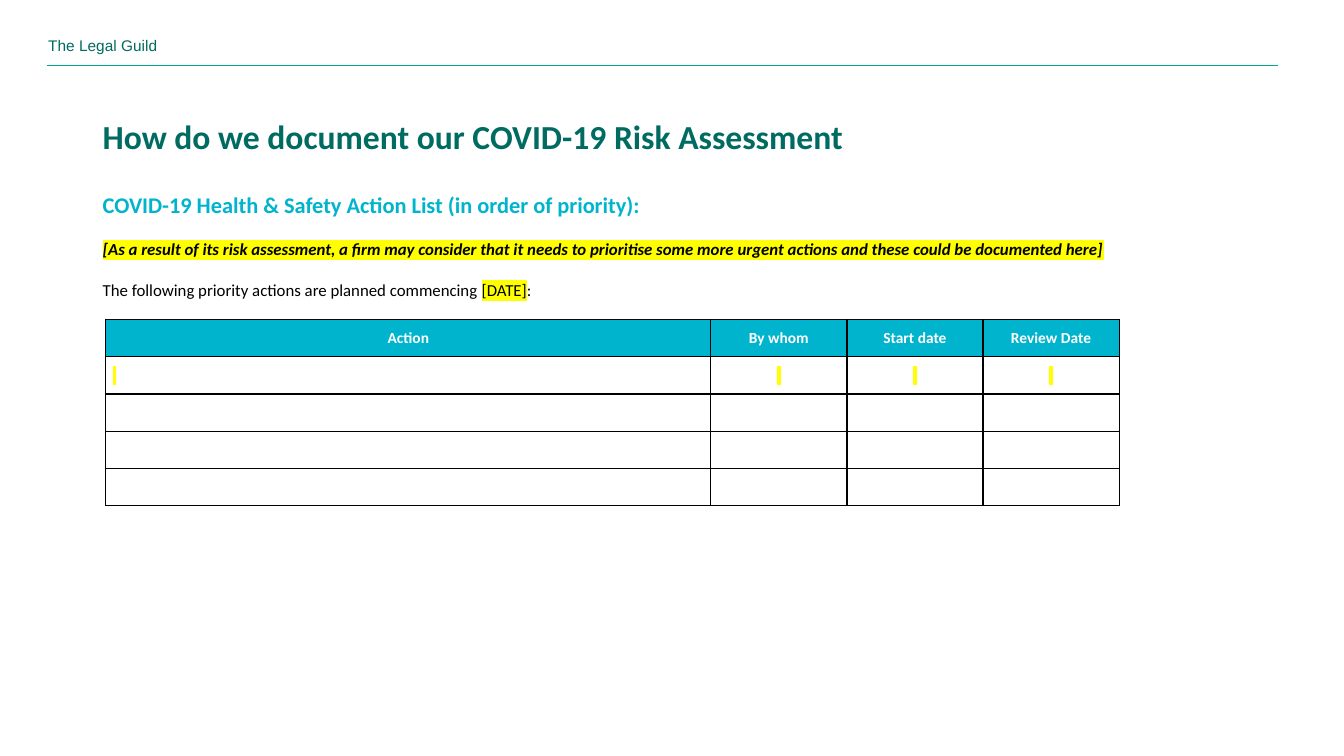
from lxml import etree
from pptx import Presentation
from pptx.dml.color import RGBColor
from pptx.enum.shapes import MSO_CONNECTOR
from pptx.enum.text import MSO_ANCHOR, PP_ALIGN
from pptx.oxml.ns import qn
from pptx.util import Inches, Pt

LEFT, CENTER, JUSTIFY = PP_ALIGN.LEFT, PP_ALIGN.CENTER, PP_ALIGN.JUSTIFY
TOP, MIDDLE = MSO_ANCHOR.TOP, MSO_ANCHOR.MIDDLE
STRAIGHT = MSO_CONNECTOR.STRAIGHT

GREEN, RULE_GREEN, TEAL = "006C61", "00A68D", "00B4CD"
BLACK, WHITE, YELLOW = "000000", "FFFFFF", "FFFF00"

HEADER = [("The Legal Guild", dict(size=11, color=GREEN, name="Arial"))]
TITLE = [("How do we document our COVID-19 Risk Assessment",
          dict(size=24, color=GREEN, bold=True))]
INTRO = [
    [("COVID-19 Health & Safety Action List (in order of priority):",
      dict(size=16, color=TEAL, bold=True))],
    [("[As a result of its risk assessment, a firm may consider that it needs to "
      "prioritise some more urgent actions and these could be documented here]",
      dict(bold=True, italic=True, highlight=YELLOW))],
    [("The following priority actions are planned commencing ", {}),
     ("[DATE]", dict(highlight=YELLOW)),
     (":", {})],
]
TEXT_BOXES = [
    ((0.38, 0.31, 6.71, 0.29), [HEADER], LEFT, TOP),
    ((0.92, 0.85, 11.5, 1), [TITLE], LEFT, MIDDLE),
    ((0.92, 1.85, 11.5, 1.18), INTRO, JUSTIFY, TOP),
]
INTRO_GAP = 14.65

ACTION_COLUMNS = [("Action", 6), ("By whom", 1.35), ("Start date", 1.35), ("Review Date", 1.35)]
ACTION_ROWS = 5
ROW_HEIGHT = 0.37
TABLE_LEFT, TABLE_TOP = 1.05, 3.17
ENTRY_MARK = " "


def rgb(value):
    """Return the colour for a hex string."""
    return RGBColor.from_string(value)


def add_span(para, text, size=12, color=BLACK, name="Calibri", bold=False, italic=False,
             highlight=None):
    """Add one formatted run to a paragraph."""
    span = para.add_run()
    span.text = text
    font = span.font
    font.size, font.name, font.bold, font.italic = Pt(size), name, bold, italic
    font.color.rgb = rgb(color)
    if highlight:
        mark = etree.Element(qn("a:highlight"))
        etree.SubElement(mark, qn("a:srgbClr"), val=highlight)
        span._r.get_or_add_rPr().find(qn("a:solidFill")).addnext(mark)


def add_text(page, place, paragraphs, align, anchor):
    """Add a wrapped text box of run-by-run paragraphs."""
    box = page.shapes.add_textbox(*map(Inches, place))
    frame = box.text_frame
    frame.word_wrap = True
    frame.vertical_anchor = anchor
    for index, spans in enumerate(paragraphs):
        para = frame.add_paragraph() if index else frame.paragraphs[0]
        para.alignment = align
        if index:
            para.space_before = Pt(INTRO_GAP)
        for text, style in spans:
            add_span(para, text, **style)


def add_header_rule(page):
    """Draw the thin line under the header."""
    rule = page.shapes.add_connector(STRAIGHT, Inches(0.47), Inches(0.65),
                                     Inches(12.68), Inches(0.65))
    rule.line.color.rgb = rgb(RULE_GREEN)
    rule.line.width = Pt(0.5)
    etree.SubElement(rule._element.spPr, qn("a:effectLst"))


def style_cell(cell, fill):
    """Set the borders, fill and margins of a cell."""
    properties = cell._tc.get_or_add_tcPr()
    for side in ("a:lnL", "a:lnR", "a:lnT", "a:lnB"):
        border = etree.SubElement(properties, qn(side), w=str(Pt(1)))
        paint = etree.SubElement(border, qn("a:solidFill"))
        etree.SubElement(paint, qn("a:srgbClr"), val=BLACK)
    cell.fill.solid()
    cell.fill.fore_color.rgb = rgb(fill)
    cell.margin_left = cell.margin_right = Inches(0.07)
    cell.margin_top = cell.margin_bottom = 0
    cell.vertical_anchor = MIDDLE


def add_action_table(page):
    """Add the action list with its header and entry rows."""
    width = sum(column_width for _, column_width in ACTION_COLUMNS)
    frame = page.shapes.add_table(ACTION_ROWS, len(ACTION_COLUMNS), Inches(TABLE_LEFT),
                                  Inches(TABLE_TOP), Inches(width),
                                  Inches(ROW_HEIGHT * ACTION_ROWS))
    table = frame.table
    for row in table.rows:
        row.height = Inches(ROW_HEIGHT)
    for column, (heading, column_width) in enumerate(ACTION_COLUMNS):
        table.columns[column].width = Inches(column_width)
        for row in range(ACTION_ROWS):
            cell = table.cell(row, column)
            style_cell(cell, WHITE if row else TEAL)
            para = cell.text_frame.paragraphs[0]
            para.alignment = LEFT if row and column == 0 else CENTER
            para.font.size = Pt(11)
            if row == 0:
                add_span(para, heading, size=11, color=WHITE, bold=True)
            elif row == 1:
                add_span(para, ENTRY_MARK, size=11, highlight=YELLOW)


def main():
    """Build the risk assessment slide."""
    deck = Presentation()
    deck.slide_width, deck.slide_height = Inches(13.33), Inches(7.5)
    page = deck.slides.add_slide(deck.slide_layouts[6])
    add_header_rule(page)
    for place, paragraphs, align, anchor in TEXT_BOXES:
        add_text(page, place, paragraphs, align, anchor)
    add_action_table(page)
    deck.save("out.pptx")


if __name__ == "__main__":
    main()
